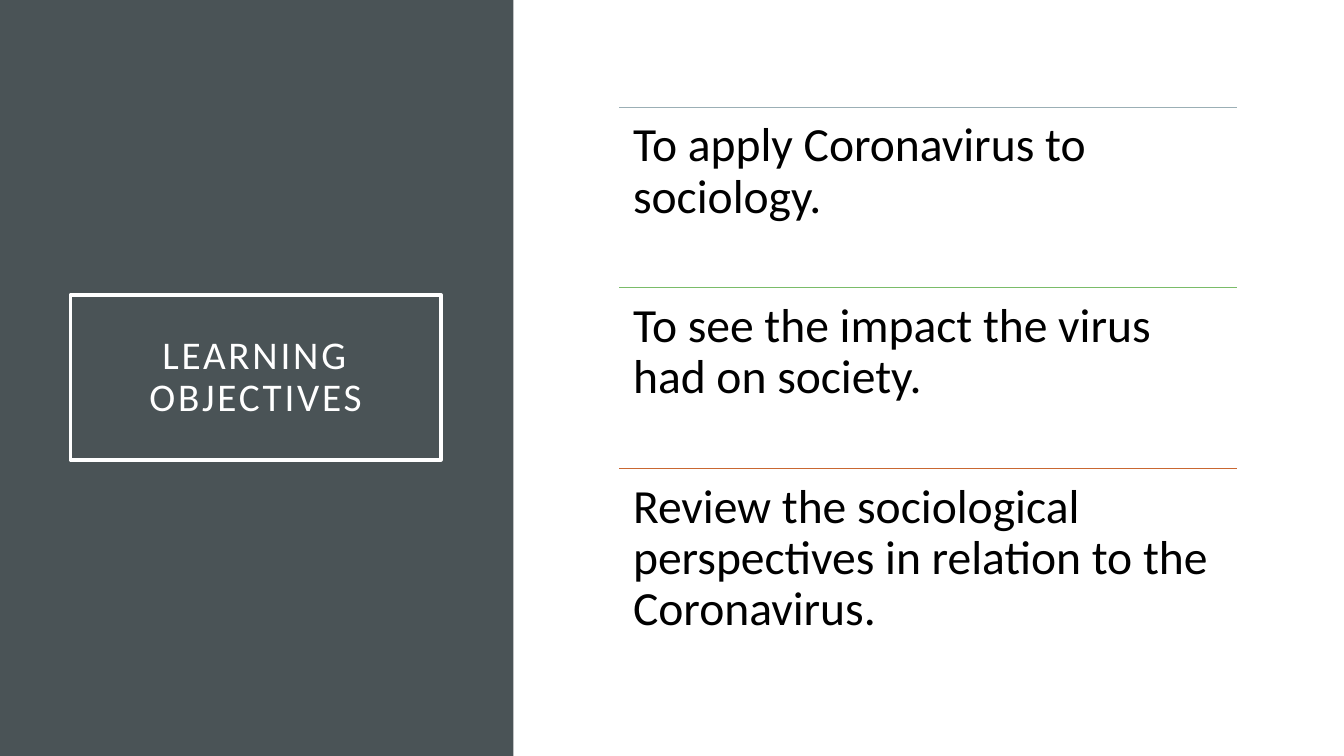
from dataclasses import dataclass

from lxml import etree
from pptx import Presentation
from pptx import util as u
from pptx.dml.color import RGBColor
from pptx.enum import shapes, text
from pptx.oxml.ns import qn


@dataclass(frozen=True)
class Theme:
    font: str = "Calibri"
    panel: str = "4A5356"
    light: str = "FFFFFF"
    dark: str = "000000"
    rules: tuple = ("9BAFB5", "7ABC69", "C96731")
    head: int = 28
    body: int = 34
    frame: float = 2.5
    rule: float = 0.5


THEME = Theme()
GOALS = (
    "To apply Coronavirus to sociology.",
    "To see the impact the virus had on society.",
    "Review the sociological perspectives in relation to the Coronavirus.",
)


def px(num):
    return u.Emu(num * 9525)


def rgb(code):
    return RGBColor.from_string(code)


def apply(item, form):
    for key, val in form.items():
        setattr(item, key, val)


def place(shape, box):
    apply(shape, dict(zip(("left", "top", "width", "height"), map(px, box))))


def write(shape, words, size, color, inset, anchor, align, after=0):
    frame = shape.text_frame
    frame.text = words
    sides = ("left", "right", "top", "bottom")
    apply(frame, {f"margin_{side}": px(inset) for side in sides})
    apply(frame, {
        "word_wrap": True,
        "auto_size": text.MSO_AUTO_SIZE.NONE,
        "vertical_anchor": anchor,
    })
    para = frame.paragraphs[0]
    apply(para, {
        "alignment": align,
        "line_spacing": 0.9,
        "space_before": u.Pt(0),
        "space_after": u.Pt(after),
    })
    run = para.runs[0]
    apply(run.font, {"name": THEME.font, "size": u.Pt(size), "bold": False})
    run.font.color.rgb = rgb(color)
    return run


def stroke(shape, color, width):
    shape.line.color.rgb = rgb(color)
    shape.line.width = u.Pt(width)


def side(slide, box):
    left, top, width, height = box
    panel = slide.shapes.add_shape(
        shapes.MSO_SHAPE.RECTANGLE, *map(px, box))
    panel.shadow.inherit = False
    panel.fill.solid()
    panel.fill.fore_color.rgb = rgb(THEME.panel)
    panel.line.fill.background()
    title = slide.shapes.title
    title._element.addprevious(panel._element)
    place(title, (left + 67, top + 281, 353, 157))
    stroke(title, THEME.light, THEME.frame)
    run = write(title, "LEARNING OBJECTIVES", THEME.head, THEME.light, 19,
                text.MSO_ANCHOR.MIDDLE, text.PP_ALIGN.CENTER)
    run.font._element.set("spc", "200")


def goals(slide, box):
    left, top, width, height = box
    step = height // len(GOALS)
    for row, (words, color) in enumerate(zip(GOALS, THEME.rules)):
        y = top + row * step
        rule = slide.shapes.add_connector(
            shapes.MSO_CONNECTOR.STRAIGHT,
            px(left), px(y), px(left + width), px(y))
        stroke(rule, color, THEME.rule)
        etree.SubElement(rule._element.spPr, qn("a:effectLst"))
        note = slide.shapes.add_textbox(*map(px, (left, y, width, step)))
        write(note, words, THEME.body, THEME.dark, 13,
              text.MSO_ANCHOR.TOP, text.PP_ALIGN.LEFT, 12)


def main():
    deck = Presentation()
    apply(deck, {"slide_width": px(1280), "slide_height": px(720)})
    slide = deck.slides.add_slide(deck.slide_layouts[5])
    side(slide, (0, 0, 489, 720))
    goals(slide, (590, 102, 588, 516))
    deck.save("out.pptx")


if __name__ == "__main__":
    main()
